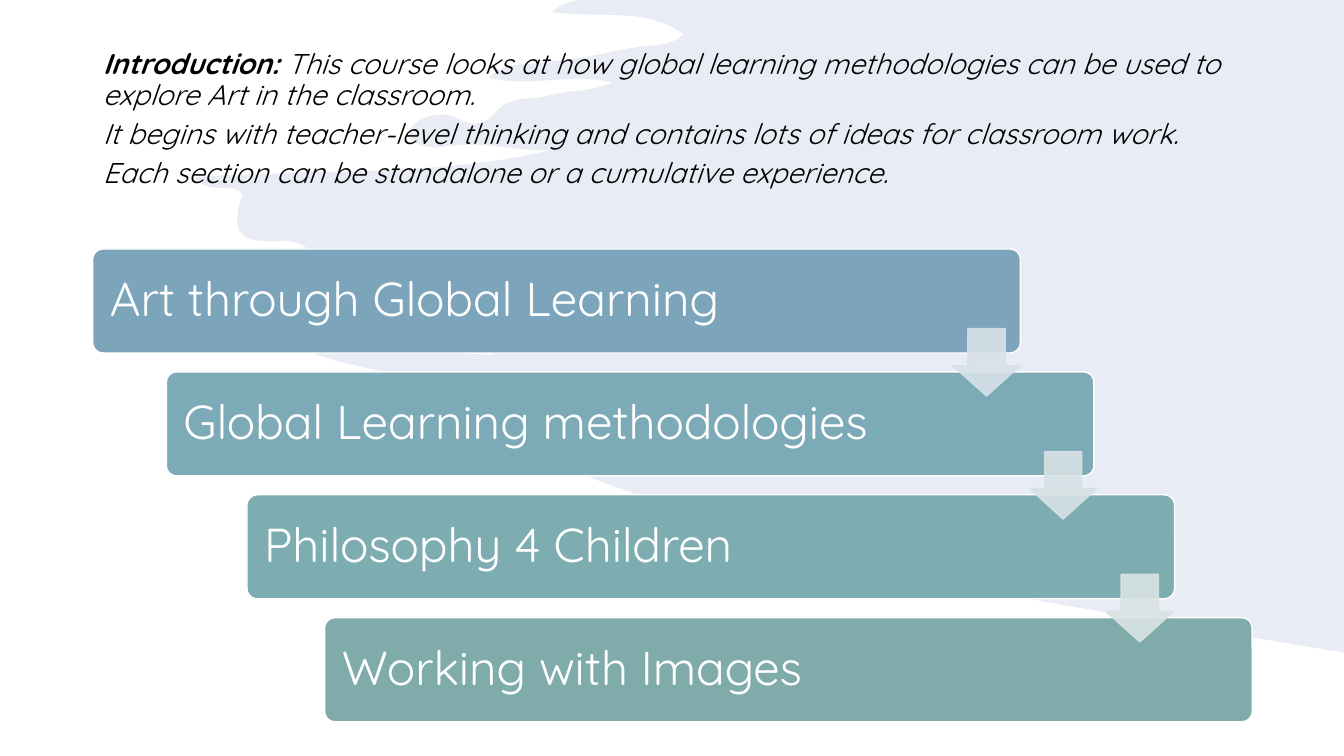
from pptx import Presentation
from pptx.dml.color import RGBColor
from pptx.enum.shapes import MSO_SHAPE as SHAPE
from pptx.enum.text import MSO_ANCHOR as ANCHOR, MSO_AUTO_SIZE as AUTO_SIZE, PP_ALIGN as ALIGN
from pptx.oxml.ns import qn
from pptx.util import Inches, Pt
from lxml.etree import SubElement

WIDTH, HEIGHT = 13.33, 7.5
FONT = "Quicksand"
BLACK, WHITE = RGBColor(0, 0, 0), RGBColor(0xFF, 0xFF, 0xFF)
LAVENDER = RGBColor(0x94, 0xA0, 0xC8)
BAR_COLORS = [RGBColor(0x7C, 0xA5, 0xBC), RGBColor(0x7D, 0xAA, 0xB7),
              RGBColor(0x7E, 0xAD, 0xB1), RGBColor(0x7F, 0xAC, 0xAA)]
ARROW_COLORS = [RGBColor(0xD7, 0xE1, 0xE7), RGBColor(0xD7, 0xE2, 0xE5),
                RGBColor(0xD8, 0xE3, 0xE2)]

INTRO = [
    ("Introduction:", " This course looks at how global learning methodologies "
     "can be used to explore Art in the classroom."),
    ("", "It begins with teacher-level thinking and contains lots of ideas for classroom work."),
    ("", "Each section can be standalone or a cumulative experience."),
]
SECTIONS = ["Art through Global Learning", "Global Learning methodologies",
            "Philosophy 4 Children", "Working with Images"]
BAR_OFFSETS = [0, 0.73, 1.53, 2.3]

# Brush edge from top to bottom: two control points and an end point per curve
BRUSH_START = (5.75, 0)
BRUSH_CURVES = [
    (5.67, 0.01, 5.57, 0.03, 5.48, 0.12), (5.95, 0.19, 6.39, 0.06, 6.78, 0.34),
    (6.64, 0.47, 6.48, 0.44, 6.32, 0.47), (6.16, 0.49, 6, 0.53, 5.84, 0.56),
    (5.67, 0.59, 5.49, 0.6, 5.32, 0.63), (5.18, 0.65, 5.02, 0.61, 4.85, 0.77),
    (5.27, 0.88, 5.66, 0.71, 6.08, 0.82), (5.84, 0.92, 5.63, 0.89, 5.44, 0.95),
    (5.27, 1, 5.06, 0.94, 4.92, 1.11), (4.81, 1.24, 4.69, 1.26, 4.55, 1.18),
    (4.42, 1.11, 4.28, 1.13, 4.15, 1.2), (4.11, 1.23, 4.06, 1.26, 4.06, 1.32),
    (4.06, 1.41, 4.12, 1.43, 4.18, 1.44), (4.24, 1.46, 4.31, 1.47, 4.37, 1.46),
    (4.74, 1.39, 5.1, 1.5, 5.47, 1.49), (4.31, 1.76, 3.14, 1.67, 1.93, 1.76),
    (2.09, 1.95, 2.29, 1.79, 2.41, 1.93), (2.3, 2.22, 2.34, 2.37, 2.58, 2.39),
    (2.8, 2.41, 3.04, 2.31, 3.16, 2.65), (3.2, 2.76, 3.41, 2.73, 3.55, 2.75),
    (3.84, 2.79, 4.14, 2.75, 4.42, 2.88), (4.53, 2.93, 4.6, 2.97, 4.55, 3.11),
    (4.49, 3.25, 4.56, 3.3, 4.66, 3.36), (4.73, 3.4, 4.83, 3.39, 4.89, 3.52),
    (4.28, 3.5, 3.69, 3.4, 3.09, 3.5), (3.75, 3.74, 4.47, 3.73, 5.12, 4.02),
    (5.1, 4.12, 4.95, 4.07, 4.94, 4.22), (5.28, 4.38, 5.69, 4.27, 6.05, 4.5),
    (5.84, 4.61, 5.65, 4.44, 5.45, 4.54), (5.52, 4.69, 8.4, 5.61, 8.92, 5.71),
    (9.78, 5.87, 11.95, 6.25, 13.18, 6.45),
]


def set_alpha(fill_parent, percent):
    """Make every colour below the element partly transparent."""
    for color in fill_parent.iter(qn("a:srgbClr")):
        SubElement(color, qn("a:alpha"), val=str(percent * 1000))


def bend_segments(sp, curves):
    """Turn the first straight segments of a freeform into Bézier curves."""
    segments = list(sp._element.iter(qn("a:lnTo")))
    for segment, (x1, y1, x2, y2, *_) in zip(segments, curves):
        bezier = SubElement(segment.getparent(), qn("a:cubicBezTo"))
        for x, y in ((x1, y1), (x2, y2)):
            SubElement(bezier, qn("a:pt"), x=str(Inches(x) - sp.left), y=str(Inches(y) - sp.top))
        bezier.append(segment[0])
        segment.getparent().replace(segment, bezier)


def add_brush_background(slide):
    points = [curve[4:] for curve in BRUSH_CURVES] + [(WIDTH, 6.47), (WIDTH, 0)]
    builder = slide.shapes.build_freeform(*map(Inches, BRUSH_START))
    builder.add_line_segments([(Inches(x), Inches(y)) for x, y in points])
    sp = builder.convert_to_shape()
    bend_segments(sp, BRUSH_CURVES)
    sp.shadow.inherit = False
    sp.fill.solid()
    sp.fill.fore_color.rgb = LAVENDER
    sp.line.fill.background()
    set_alpha(sp._element.spPr, 20)
    slide.shapes._spTree.insert(2, sp._element)


def fill_intro(body, left, top, width, height):
    body.left, body.top, body.width, body.height = map(Inches, (left, top, width, height))
    tf = body.text_frame
    tf.word_wrap = True
    tf.auto_size = AUTO_SIZE.NONE
    tf.vertical_anchor = ANCHOR.MIDDLE
    for i, (lead, text) in enumerate(INTRO):
        p = tf.paragraphs[0] if i == 0 else tf.add_paragraph()
        pPr = p._p.get_or_add_pPr()
        pPr.set("marL", "0")
        pPr.set("indent", "0")
        SubElement(pPr, qn("a:buNone"))
        p.line_spacing, p.space_before, p.space_after = 0.9, Pt(0), Pt(6)
        for words, bold in ((lead, True), (text, False)):
            if words:
                r = p.add_run()
                r.text = words
                r.font.name, r.font.size = FONT, Pt(20.4)
                r.font.bold, r.font.italic = bold, True
                r.font.color.rgb = BLACK


def add_block(slide, kind, box, color, line_color):
    sp = slide.shapes.add_shape(kind, *map(Inches, box))
    sp.shadow.inherit = False
    sp.fill.solid()
    sp.fill.fore_color.rgb = color
    sp.line.color.rgb = line_color
    sp.line.width = Pt(1)
    return sp


def add_staircase(slide, left, top, width, height):
    """Place the section bars down the box, with an arrow between neighbours."""
    bar_w, bar_h = width * 0.8, height * 0.22
    step = (height - bar_h) / (len(SECTIONS) - 1)
    for i, (title, offset, color) in enumerate(zip(SECTIONS, BAR_OFFSETS, BAR_COLORS)):
        bar = add_block(slide, SHAPE.ROUNDED_RECTANGLE,
                        (left + offset, top + i * step, bar_w, bar_h), color, WHITE)
        bar.adjustments[0] = 0.1
        tf = bar.text_frame
        tf.word_wrap = True
        tf.vertical_anchor = ANCHOR.MIDDLE
        tf.margin_left = tf.margin_right = Inches(0.14)
        tf.text = title
        p = tf.paragraphs[0]
        p.alignment, p.line_spacing = ALIGN.LEFT, 0.9
        font = p.runs[0].font
        font.name, font.size = FONT, Pt(34)
        font.color.rgb = WHITE

    size = 0.67
    for i, color in enumerate(ARROW_COLORS):
        x = left + bar_w - size + i * 0.76
        y = top + 0.79 + i * step
        arrow = add_block(slide, SHAPE.DOWN_ARROW, (x, y, size, size), color, color)
        # Head length and shaft width, as shares of the arrow
        arrow.adjustments[0], arrow.adjustments[1] = 0.55, 0.45
        set_alpha(arrow._element.spPr, 90)


def main():
    prs = Presentation()
    prs.slide_width, prs.slide_height = Inches(WIDTH), Inches(HEIGHT)
    slide = prs.slides.add_slide(prs.slide_layouts[1])
    title = slide.shapes.title._element
    title.getparent().remove(title)
    add_brush_background(slide)
    fill_intro(slide.placeholders[1], 0.92, 0.18, 11.5, 2.02)
    add_staircase(slide, 0.92, 2.47, 11.5, 4.69)
    prs.save("out.pptx")


if __name__ == "__main__":
    main()
